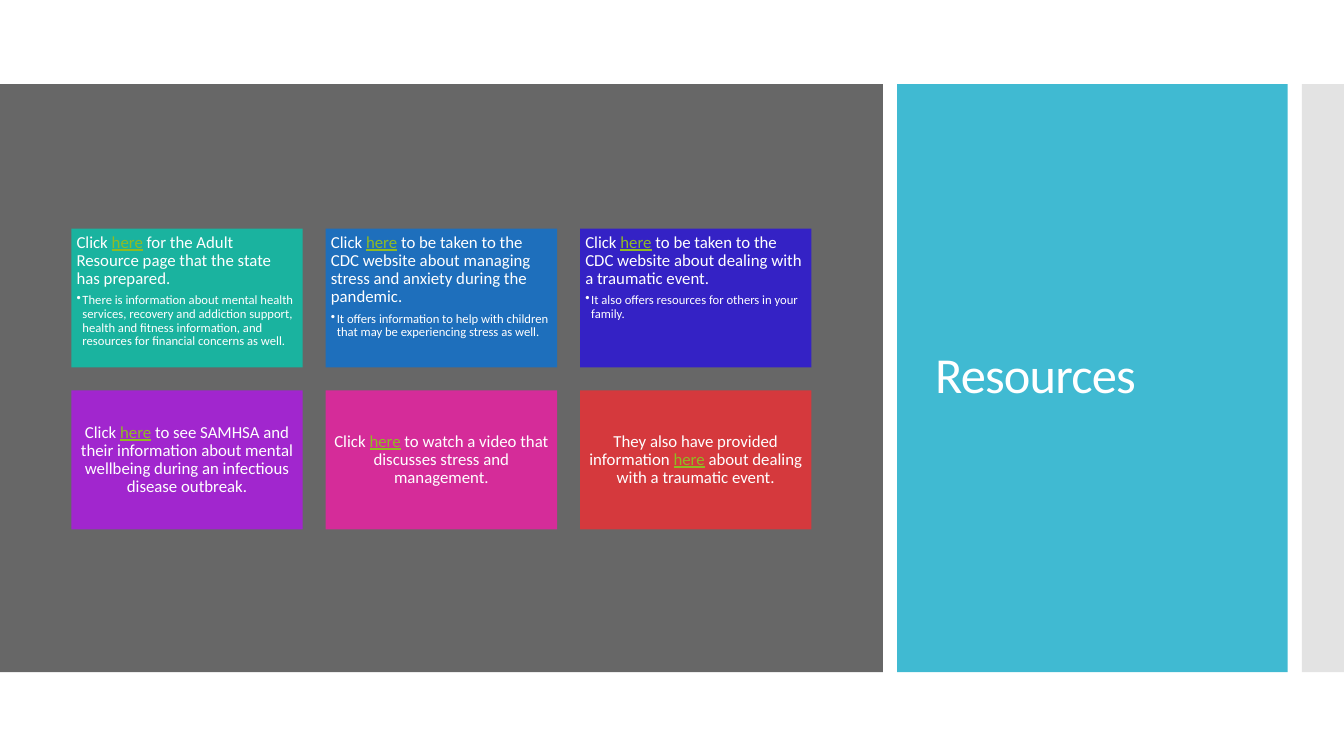
"""Build the Resources slide: six link cards beside a title panel."""
from dataclasses import dataclass

from lxml.etree import SubElement
from pptx import Presentation
from pptx.dml.color import RGBColor
from pptx.enum.shapes import MSO_SHAPE
from pptx.enum.text import MSO_ANCHOR, PP_ALIGN
from pptx.oxml.ns import qn
from pptx.util import Cm, Pt


@dataclass(frozen=True)
class Theme:
    font: str = "Calibri"
    text: str = "FFFFFF"
    link: str = "90BB23"
    board: str = "676767"
    panel: str = "40BAD2"
    strip: str = "E3E3E3"
    title_size: int = 36
    card_size: int = 12
    detail_size: int = 9


THEME = Theme()
BAND_TOP, BAND_HEIGHT = 2.12, 14.82
CARD_LEFT, CARD_TOP, CARD_WIDTH, CARD_HEIGHT, CARD_GAP = 1.8, 5.76, 5.83, 3.5, 0.58
COLUMNS = 3
LINK = "here"

BANDS = [
    (0, 22.25, THEME.board),
    (22.61, 9.84, THEME.panel),
    (32.81, 1.06, THEME.strip),
]
CARDS = [
    ("1AB39F", "Click ", " for the Adult Resource page that the state has prepared.",
     "There is information about mental health services, recovery and addiction support, "
     "health and fitness information, and resources for financial concerns as well."),
    ("1E6FBC", "Click ", " to be taken to the CDC website about managing stress and anxiety "
     "during the pandemic.",
     "It offers information to help with children that may be experiencing stress as well."),
    ("3422C5", "Click ", " to be taken to the CDC website about dealing with a traumatic event.",
     "It also offers resources for others in your family."),
    ("A126CE", "Click ", " to see SAMHSA and their information about mental wellbeing during "
     "an infectious disease outbreak.", None),
    ("D52C99", "Click ", " to watch a video that discusses stress and management.", None),
    ("D5393D", "They also have provided information ", " about dealing with a traumatic event.",
     None),
]


def apply(target, formats):
    """Set each named attribute on the target."""
    for name, value in formats.items():
        setattr(target, name, value)


def add_rect(slide, left, top, width, height, color):
    """Add a flat rectangle without outline, measured in centimetres."""
    s = slide.shapes.add_shape(MSO_SHAPE.RECTANGLE, Cm(left), Cm(top), Cm(width), Cm(height))
    s.shadow.inherit = False
    s.fill.solid()
    s.fill.fore_color.rgb = RGBColor.from_string(color)
    s.line.fill.background()
    return s


def add_run(p, text, size, color=THEME.text, underline=False):
    """Add a run in the theme font."""
    r = p.add_run()
    r.text = text
    apply(r.font, {"name": THEME.font, "size": Pt(size), "underline": underline})
    r.font.color.rgb = RGBColor.from_string(color)
    return r


def add_detail(tf, text):
    """Add a small bulleted paragraph."""
    p = tf.add_paragraph()
    apply(p, {"alignment": PP_ALIGN.LEFT, "line_spacing": 0.9, "space_after": Pt(1.4), "level": 1})
    pPr = p._p.get_or_add_pPr()
    pPr.set("marL", str(Cm(0.15)))
    pPr.set("indent", str(-Cm(0.15)))
    SubElement(pPr, qn("a:buChar")).set("char", "•")
    add_run(p, text, THEME.detail_size)


def add_card(slide, index, color, before, after, detail):
    """Add one card at its place in the grid."""
    row, column = divmod(index, COLUMNS)
    s = add_rect(slide, CARD_LEFT + column * (CARD_WIDTH + CARD_GAP),
                 CARD_TOP + row * (CARD_HEIGHT + CARD_GAP), CARD_WIDTH, CARD_HEIGHT, color)
    tf = s.text_frame
    margins = {f"margin_{side}": Cm(0.13) for side in ("left", "top", "right", "bottom")}
    anchor = MSO_ANCHOR.TOP if detail else MSO_ANCHOR.MIDDLE
    apply(tf, {**margins, "word_wrap": True, "vertical_anchor": anchor})
    p = tf.paragraphs[0]
    apply(p, {"alignment": PP_ALIGN.LEFT if detail else PP_ALIGN.CENTER,
              "line_spacing": 0.9, "space_after": Pt(4.2)})
    add_run(p, before, THEME.card_size)
    add_run(p, LINK, THEME.card_size, THEME.link, True)
    add_run(p, after, THEME.card_size)
    if detail:
        add_detail(tf, detail)


def add_title(slide, text):
    """Add the slide title on the coloured panel."""
    s = slide.shapes.add_textbox(Cm(23.32), Cm(3.12), Cm(8.18), Cm(12.78))
    tf = s.text_frame
    apply(tf, {"word_wrap": True, "vertical_anchor": MSO_ANCHOR.MIDDLE})
    p = tf.paragraphs[0]
    p.line_spacing = 0.9
    r = add_run(p, text, THEME.title_size)
    r._r.get_or_add_rPr().set("spc", "-60")


def main():
    """Build and save the slide."""
    prs = Presentation()
    apply(prs, {"slide_width": Cm(33.87), "slide_height": Cm(19.05)})
    slide = prs.slides.add_slide(prs.slide_layouts[6])
    for left, width, color in BANDS:
        add_rect(slide, left, BAND_TOP, width, BAND_HEIGHT, color)
    add_title(slide, "Resources")
    for index, card in enumerate(CARDS):
        add_card(slide, index, *card)
    prs.save("out.pptx")


if __name__ == "__main__":
    main()
